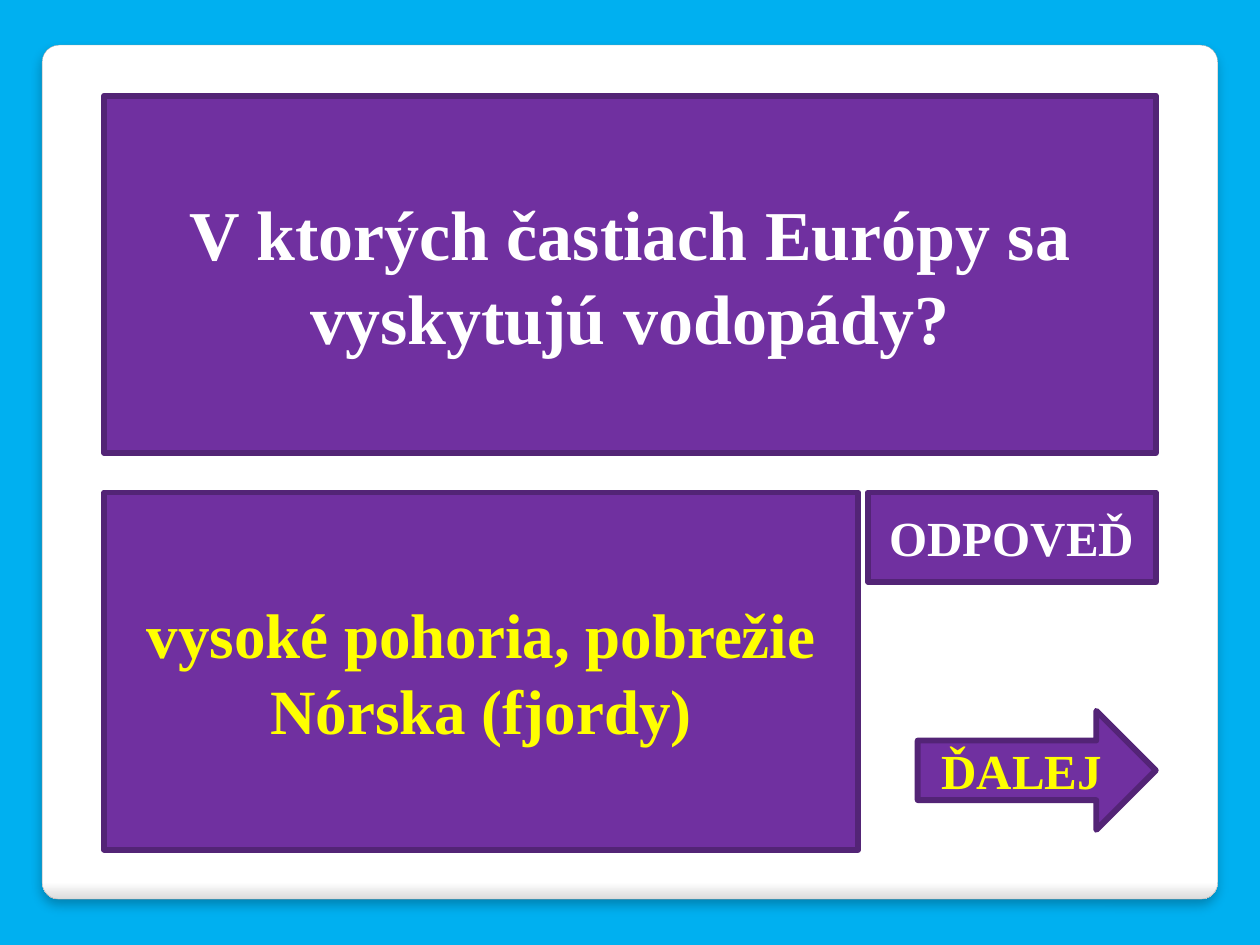
from dataclasses import dataclass

from lxml import etree
from pptx import Presentation
from pptx.dml.color import RGBColor
from pptx.enum.shapes import MSO_SHAPE
from pptx.enum.text import MSO_ANCHOR, PP_ALIGN
from pptx.oxml import parse_xml
from pptx.oxml.ns import nsdecls
from pptx.util import Cm, Pt

RECTANGLE = MSO_SHAPE.RECTANGLE
ROUNDED = MSO_SHAPE.ROUNDED_RECTANGLE
ARROW = MSO_SHAPE.RIGHT_ARROW
MIDDLE = MSO_ANCHOR.MIDDLE
CENTER = PP_ALIGN.CENTER

SKY = RGBColor(0x00, 0xB0, 0xF0)
WHITE = RGBColor(0xFF, 0xFF, 0xFF)
YELLOW = RGBColor(0xFF, 0xFF, 0x00)
PURPLE = RGBColor(0x70, 0x30, 0xA0)
DARK_PURPLE = RGBColor(0x53, 0x24, 0x76)
PANEL_EDGE = RGBColor(0xDA, 0xDA, 0xDA)
PANEL_LINE = RGBColor(0xA4, 0xA4, 0xA4)

SHADOW = (
    f'<a:outerShdw {nsdecls("a")} blurRad="{Pt(6)}" dist="{Pt(4)}" dir="5400000" '
    'algn="t" rotWithShape="0"><a:srgbClr val="000000"><a:alpha val="25000"/>'
    "</a:srgbClr></a:outerShdw>"
)


@dataclass
class Box:
    """A region in centimetres."""

    left: float
    top: float
    width: float
    height: float

    def lengths(self):
        """Return the region as slide lengths."""
        return [Cm(value) for value in (self.left, self.top, self.width, self.height)]


def add_panel(page, box):
    """Draw the white rounded panel behind the cards."""
    panel = page.shapes.add_shape(ROUNDED, *box.lengths())
    panel.adjustments[0] = 0.02
    panel.fill.gradient()
    panel.fill.gradient_angle = 270
    stops = zip(panel.fill.gradient_stops, (0.98, 1), (WHITE, PANEL_EDGE))
    for stop, position, color in stops:
        stop.position = position
        stop.color.rgb = color
    panel.line.color.rgb = PANEL_LINE
    panel.line.width = Pt(0.16)
    panel.shadow.inherit = False
    effects = panel.element.spPr.find("{*}effectLst")
    etree.SubElement(effects, "placeholder")
    effects.replace(effects[0], parse_xml(SHADOW))


def add_card(page, box, text, size, color, kind=RECTANGLE):
    """Draw a purple shape with centred bold text."""
    card = page.shapes.add_shape(kind, *box.lengths())
    card.shadow.inherit = False
    card.fill.solid()
    card.fill.fore_color.rgb = PURPLE
    card.line.color.rgb = DARK_PURPLE
    card.line.width = Pt(3.35)
    frame = card.text_frame
    frame.word_wrap = True
    frame.vertical_anchor = MIDDLE
    para = frame.paragraphs[0]
    para.alignment = CENTER
    span = para.add_run()
    span.text = text
    span.font.color.rgb = color
    formats = {"name": "Times New Roman", "size": Pt(size), "bold": True}
    for name, value in formats.items():
        setattr(span.font, name, value)


def add_controls(page, box):
    """Place the answer button at the top and the next arrow near the bottom."""
    add_card(page, Box(box.left, box.top, box.width, 1.8), "ODPOVEĎ", 28, WHITE)
    arrow = Box(box.left + 1, box.top + 4.4, box.width - 1, 2.4)
    add_card(page, arrow, "ĎALEJ", 28, YELLOW, ARROW)


def add_quiz(page, box):
    """Place the question over the answer and the controls."""
    card_height, gap, controls_width = 7.2, 0.8, 5.8
    lower_top = box.top + card_height + gap
    question = Box(box.left, box.top, box.width, card_height)
    answer = Box(box.left, lower_top, box.width - controls_width - 0.2, card_height)
    controls_left = box.left + box.width - controls_width
    add_card(page, question, "V ktorých častiach Európy sa vyskytujú vodopády?", 40, WHITE)
    add_card(page, answer, "vysoké pohoria, pobrežie Nórska (fjordy)", 36, YELLOW)
    add_controls(page, Box(controls_left, lower_top, controls_width, card_height))


def main():
    """Build and save the quiz slide."""
    deck = Presentation()
    deck.slide_width, deck.slide_height = Cm(25.4), Cm(19.05)
    page = deck.slides.add_slide(deck.slide_layouts[6])
    page.background.fill.solid()
    page.background.fill.fore_color.rgb = SKY
    add_panel(page, Box(0.85, 0.91, 23.7, 17.22))
    add_quiz(page, Box(2.1, 1.93, 21.2, 15.2))
    deck.save("out.pptx")


if __name__ == "__main__":
    main()
